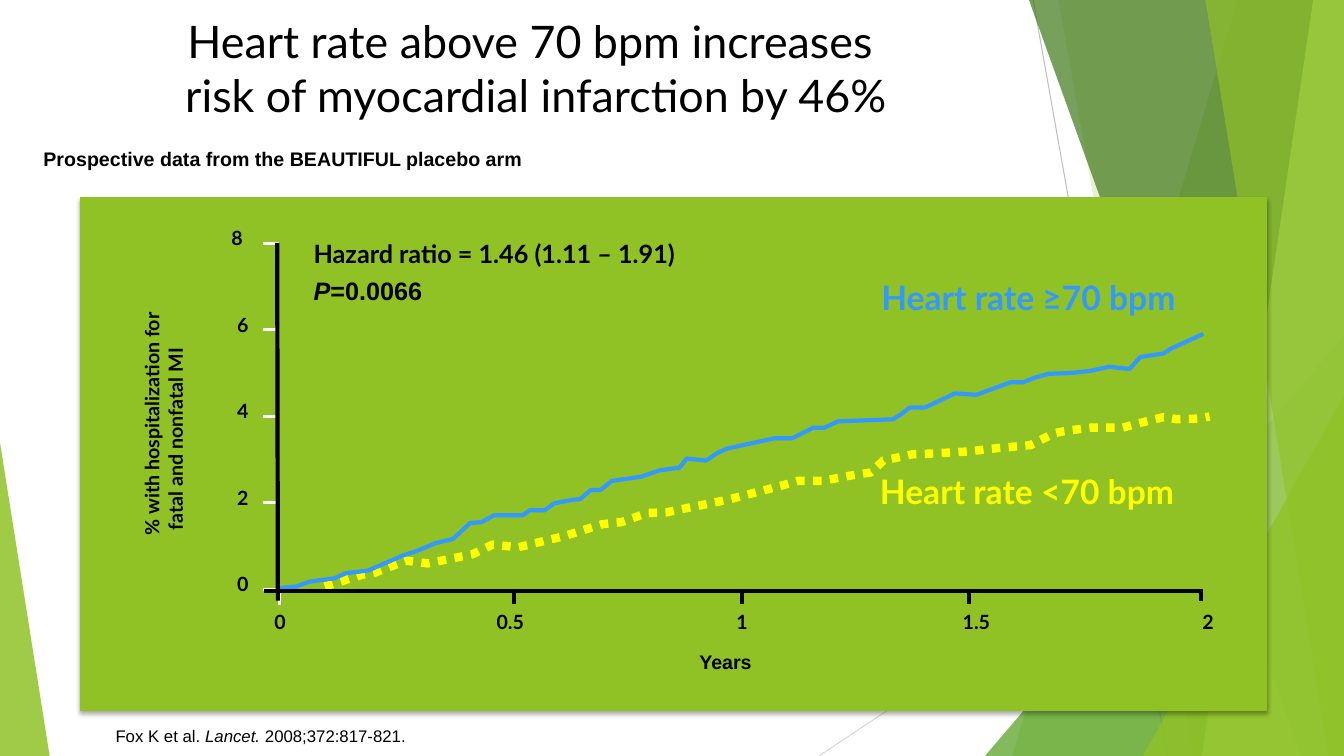
from lxml import etree
from pptx import Presentation
from pptx.dml.color import RGBColor
from pptx.enum import dml, shapes, text
from pptx.oxml import ns
from pptx.util import Pt

theme = {
    "black": "000000", "white": "FFFFFF", "grey": "BFBFBF", "pale": "D9D9D9",
    "green": "90C226", "leaf": "54A021", "dark": "3F7819", "lime": "C0E474",
    "blue": "3399FF", "yellow": "FFFF00",
    "title": 32, "series": 24, "stat": 18, "label": 14, "cite": 12,
    "main": "Lato", "plain": "Arial",
}
LEFT, MID, RIGHT = text.PP_ALIGN.LEFT, text.PP_ALIGN.CENTER, text.PP_ALIGN.RIGHT

deck = Presentation()
deck.slide_width, deck.slide_height = Pt(960), Pt(540)
slide = deck.slides.add_slide(deck.slide_layouts[6])
items = slide.shapes


def write(lines, box, size, face="main", color="black", align=LEFT, bold=True, wrap=False):
    label = items.add_textbox(*map(Pt, box))
    frame = label.text_frame
    frame.word_wrap = wrap
    frame.margin_left = frame.margin_right = frame.margin_top = frame.margin_bottom = 0
    for i, line in enumerate(lines):
        para = frame.paragraphs[0] if i == 0 else frame.add_paragraph()
        para.alignment = align
        font = para.font
        font.name, font.size, font.bold = theme[face], Pt(theme[size]), bold
        font.color.rgb = RGBColor.from_string(theme[color])
        for j, part in enumerate(line.split("|")):
            if part:
                run = para.add_run()
                run.text = part
                if j % 2:
                    run.font.italic = True
    return label


def rule(x1, y1, x2, y2, color, width):
    line = items.add_connector(shapes.MSO_CONNECTOR.STRAIGHT, Pt(x1), Pt(y1), Pt(x2), Pt(y2))
    line.line.color.rgb = RGBColor.from_string(theme[color])
    line.line.width = Pt(width)
    etree.SubElement(line._element.spPr, ns.qn("a:effectLst"))


rule(738, 0, 834, 540, "grey", 0.75)
rule(960, 290, 585, 540, "pale", 0.75)

facets = [
    ((884, 723), "green", 30),
    ((756, 852), "green", 20),
    ((703.5, 240, 256.5, 300, 1), "leaf", 72),
    ((735, 929.5), "dark", 70),
    ((938, 858.5), "lime", 70),
    ((861, 949), "green", 65),
    ((816.5, 283, 143.5, 257, 1), "green", 80),
    ((0, 316, 35.5, 224, 0), "green", 85),
]
for place, color, alpha in facets:
    if len(place) == 2:
        top, base = place
        edge = items.build_freeform(Pt(top), 0, 1)
        edge.add_line_segments([(Pt(960), 0), (Pt(960), Pt(540)), (Pt(base), Pt(540))])
        facet = edge.convert_to_shape()
    else:
        facet = items.add_shape(shapes.MSO_SHAPE.ISOSCELES_TRIANGLE, *map(Pt, place[:4]))
        facet.adjustments[0] = place[4]
    facet.shadow.inherit = False
    facet.line.fill.background()
    facet.fill.solid()
    facet.fill.fore_color.rgb = RGBColor.from_string(theme[color])
    tint = facet._element.spPr.find(".//" + ns.qn("a:srgbClr"))
    etree.SubElement(tint, ns.qn("a:alpha"), val=str(alpha * 1000))

panel = items.add_shape(shapes.MSO_SHAPE.RECTANGLE, Pt(57.5), Pt(141), Pt(847), Pt(366.5))
panel.fill.solid()
panel.fill.fore_color.rgb = panel.line.color.rgb = RGBColor.from_string(theme["green"])
panel.line.width = Pt(1)
panel.shadow.inherit = False
glow = etree.SubElement(
    panel._element.spPr.find(ns.qn("a:effectLst")), ns.qn("a:outerShdw"),
    blurRad=str(Pt(3)), dist=str(Pt(2)), dir="5400000", rotWithShape="0")
shade = etree.SubElement(glow, ns.qn("a:srgbClr"), val=theme["black"])
etree.SubElement(shade, ns.qn("a:alpha"), val="35000")

title = write(["Heart rate above 70 bpm increases", " risk of myocardial infarction by 46%"],
              (50.5, 9.5, 656.5, 78), "title", align=MID, bold=False, wrap=True)
title.text_frame.vertical_anchor = text.MSO_ANCHOR.MIDDLE
write(["Prospective data from the BEAUTIFUL placebo arm"],
      (31, 105, 702, 17), "label", "plain", wrap=True)
ratio = write(["Hazard ratio = 1.46 (1.11 – 1.91)"], (224, 173, 278.5, 20), "stat")
ratio.text_frame.paragraphs[0].line_spacing = 0.9
write(["|P|=0.0066"], (224, 196.5, 79, 21.5), "stat", "plain")
write(["Heart rate ≥70 bpm"], (629.5, 198, 223, 29), "series", color="blue")
write(["Heart rate <70 bpm"], (628.5, 336, 223, 29), "series", color="yellow")
write(["Years"], (499.5, 464.5, 37.5, 17), "label", "plain")
side = write(["% with hospitalization for", " fatal and nonfatal MI"],
             (32.5, 281, 168.5, 34), "label")
side.rotation = 270
write(["Fox K et al. |Lancet.| 2008;372:817-821."],
      (80.5, 518.5, 209.5, 14.5), "cite", "plain", align=RIGHT, bold=False)

for i, mark in enumerate(["0", "2", "4", "6", "8"]):
    rule(188, 421 - 61.8 * i, 199.5, 421 - 61.8 * i, "white", 2.25)
    write([mark], (165 if mark == "8" else 169, 408.5 - 61.7 * i, 8.5, 17), "label", align=RIGHT)
rule(199.5, 421, 199.5, 432.5, "white", 2.25)
for mark, mid in zip(["0", "0.5", "1", "1.5", "2"], [200, 364.5, 530, 697.5, 863]):
    write([mark], (mid - 11, 435.5, 22, 17), "label", align=MID)

low = [
    (232, 419), (259, 410.5), (268, 409), (290, 400.5), (305.5, 402.5), (337.5, 396),
    (352, 389), (370, 391), (403, 383), (430, 374.5), (444, 373), (462, 366.5),
    (476, 366), (520, 357), (558, 347), (570, 343.5), (588, 343.5), (606, 340),
    (622, 337.5), (631, 329), (652, 324.5), (666, 324), (692, 322.5), (709, 320.5),
    (736, 318), (753, 309.5), (760, 308), (779, 305.5), (802, 305.5), (813, 302.5),
    (831, 298), (841, 299.5), (857, 299), (864, 297.5),
]
high = [
    (200, 420), (211.5, 419), (221, 415.5), (239, 413), (247, 409.5), (263, 407.5),
    (278, 401), (288.5, 396.5), (296.5, 394), (311, 388), (323.5, 385), (336, 373.5),
    (344, 373), (353, 368), (373.5, 368), (378.5, 364.5), (389, 364.5), (396, 359.5),
    (409, 357), (414.5, 356.5), (422, 350), (429, 350), (437, 343.5), (458, 340.5),
    (471, 336), (485.5, 334), (490.5, 327.5), (504.5, 329), (512.5, 323.5), (519, 320.5),
    (535, 317), (553.5, 313), (566, 313), (581, 305.5), (589, 305.5), (598.5, 301),
    (638, 299.5), (643.5, 296), (650, 291), (661, 291), (682, 281), (697.5, 282),
    (722, 273), (731, 273), (740, 269.5), (749, 267), (764, 266.5), (778.5, 265),
    (792, 262), (807, 263.5), (814.5, 255), (831, 252.5), (836.5, 249), (859.5, 238.5),
]
for points, color, width, dash in [
    (low, "yellow", 6, dml.MSO_LINE.ROUND_DOT),
    (high, "blue", 3, dml.MSO_LINE.SOLID),
]:
    first, *rest = [(Pt(x), Pt(y)) for x, y in points]
    trace = items.build_freeform(*first, 1)
    trace.add_line_segments(rest, close=False)
    curve = trace.convert_to_shape()
    curve.shadow.inherit = False
    curve.fill.background()
    curve.line.color.rgb = RGBColor.from_string(theme[color])
    curve.line.width = Pt(width)
    curve.line.dash_style = dash

rule(188.5, 422, 859, 422, "black", 3)
rule(198, 173.5, 198.5, 429, "black", 3)
for x, y in [(367, 423), (530, 423), (692, 423), (858, 420.5)]:
    rule(x, y, x, y + 8.5, "black", 3)

deck.save("out.pptx")
